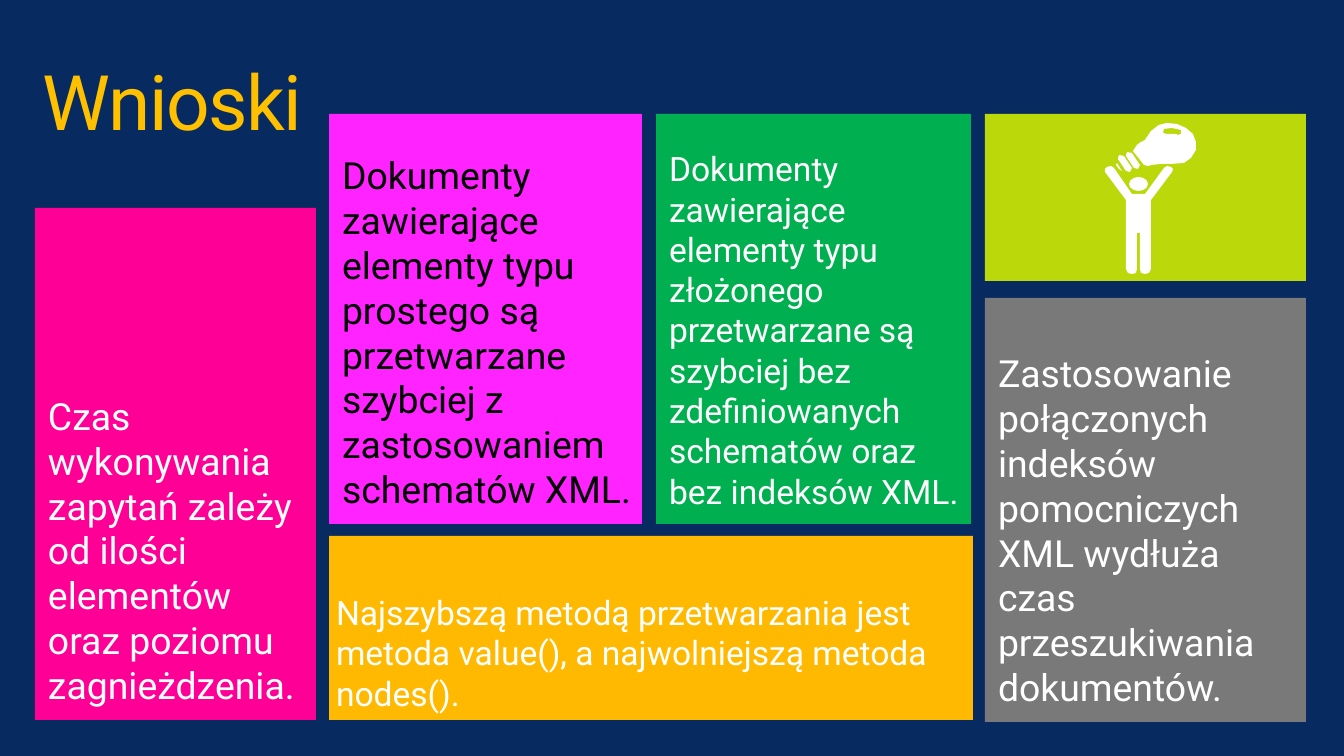
import pptx
import pptx.dml.color
import pptx.enum.shapes
import pptx.enum.text
import pptx.util

RGBColor = pptx.dml.color.RGBColor
NAVY = RGBColor(0x07, 0x2B, 0x60)
AMBER = RGBColor(0xFF, 0xC0, 0x00)
MAGENTA = RGBColor(0xFF, 0x24, 0xFF)
PINK = RGBColor(0xFF, 0x00, 0x97)
ORANGE = RGBColor(0xFF, 0xB9, 0x00)
GREEN = RGBColor(0x00, 0xB0, 0x50)
GRAY = RGBColor(0x79, 0x79, 0x79)
LIME = RGBColor(0xBA, 0xD8, 0x0A)
WHITE = RGBColor(0xFF, 0xFF, 0xFF)
BLACK = RGBColor(0x00, 0x00, 0x00)
FONT = "Roboto"
SCALE = 914400 / 134.4


def px(length):
    return pptx.util.Emu(round(length * SCALE))


def paint(shape, color):
    shape.shadow.inherit = False
    shape.fill.solid()
    shape.fill.fore_color.rgb = color
    shape.line.fill.background()


deck = pptx.Presentation()
deck.slide_width, deck.slide_height = px(1344), px(756)
page = deck.slides.add_slide(deck.slide_layouts[5])
page.background.fill.solid()
page.background.fill.fore_color.rgb = NAVY

title = page.shapes.title
title.left, title.top, title.width, title.height = px(28), px(55), px(1230), px(83)
frame = title.text_frame
frame.text = "Wnioski"
frame.word_wrap = True
frame.auto_size = pptx.enum.text.MSO_AUTO_SIZE.NONE
frame.vertical_anchor = pptx.enum.text.MSO_ANCHOR.TOP
frame.margin_left = frame.margin_right = px(14)
frame.margin_top = frame.margin_bottom = px(9)
para = frame.paragraphs[0]
para.alignment = pptx.enum.text.PP_ALIGN.LEFT
para.line_spacing = 0.9
span = para.runs[0]
span.font.name = FONT
span.font.size = pptx.util.Pt(41)
span.font.color.rgb = AMBER
span.font._element.set("spc", "-80")

tiles = [
    (329, 114, 313, 410, MAGENTA, BLACK, 20, 13,
     "Dokumenty zawierające elementy typu prostego są przetwarzane szybciej "
     "z zastosowaniem schematów XML."),
    (35, 208, 281, 512, PINK, WHITE, 20, 13,
     "Czas wykonywania zapytań zależy od ilości elementów oraz poziomu "
     "zagnieżdzenia."),
    (329, 536, 644, 184, ORANGE, WHITE, 18, 7,
     "Najszybszą metodą przetwarzania jest metoda value(), a najwolniejszą "
     "metoda nodes()."),
    (656, 114, 315, 410, GREEN, WHITE, 18, 13,
     "Dokumenty zawierające elementy typu złożonego przetwarzane są szybciej "
     "bez zdefiniowanych schematów oraz bez indeksów XML."),
    (985, 298, 321, 424, GRAY, WHITE, 20, 13,
     "Zastosowanie połączonych indeksów pomocniczych XML wydłuża czas "
     "przeszukiwania dokumentów."),
    (985, 114, 321, 167, LIME, WHITE, 20, 13, ""),
]
for left, top, width, height, fill, ink, size, inset, text in tiles:
    box = page.shapes.add_shape(
        pptx.enum.shapes.MSO_SHAPE.RECTANGLE, px(left), px(top), px(width), px(height))
    paint(box, fill)
    if not text:
        continue
    frame = box.text_frame
    frame.text = text
    frame.word_wrap = True
    frame.vertical_anchor = pptx.enum.text.MSO_ANCHOR.BOTTOM
    frame.margin_left = frame.margin_bottom = px(inset)
    frame.margin_top = frame.margin_right = px(7)
    para = frame.paragraphs[0]
    para.alignment = pptx.enum.text.PP_ALIGN.LEFT
    span = para.runs[0]
    span.font.name = FONT
    span.font.size = pptx.util.Pt(size)
    span.font.color.rgb = ink

head = page.shapes.add_shape(
    pptx.enum.shapes.MSO_SHAPE.OVAL, px(1129), px(177), px(19), px(14))
paint(head, WHITE)

body = [
    (1171, 167), (1167, 166), (1164, 168), (1145, 194), (1132, 194), (1114, 168),
    (1111, 166), (1107, 167), (1105, 169), (1105, 172), (1126, 200), (1126, 269),
    (1128, 273), (1132, 274), (1136, 273), (1137, 269), (1137, 233), (1140, 233),
    (1140, 269), (1141, 273), (1145, 274), (1149, 273), (1151, 269), (1151, 200),
    (1172, 172), (1173, 169),
]
bulb = [
    (1193, 134), (1186, 128), (1177, 124), (1167, 123), (1159, 125), (1151, 131),
    (1145, 140), (1141, 142), (1137, 145), (1133, 151), (1144, 165), (1148, 166),
    (1152, 165), (1161, 164), (1171, 164), (1184, 163), (1191, 158), (1196, 150),
    (1196, 142),
]
glint = [
    (1176, 134), (1167, 134), (1163, 133), (1164, 129), (1172, 128), (1181, 130),
    (1181, 134), (1178, 135),
]
thread = [(1140, 165), (1132, 153), (1127, 152), (1126, 156), (1134, 168), (1138, 169)]
next_thread = [(x - 8, y + 3) for x, y in thread]
tip = [(1117, 163), (1116, 165), (1119, 169), (1122, 171)]

for outlines in ([body], [bulb, glint, thread, next_thread, tip]):
    builder = page.shapes.build_freeform(*outlines[0][0], scale=SCALE)
    for number, outline in enumerate(outlines):
        if number:
            builder.move_to(*outline[0])
        builder.add_line_segments(outline[1:], close=True)
    paint(builder.convert_to_shape(), WHITE)

deck.save("out.pptx")
